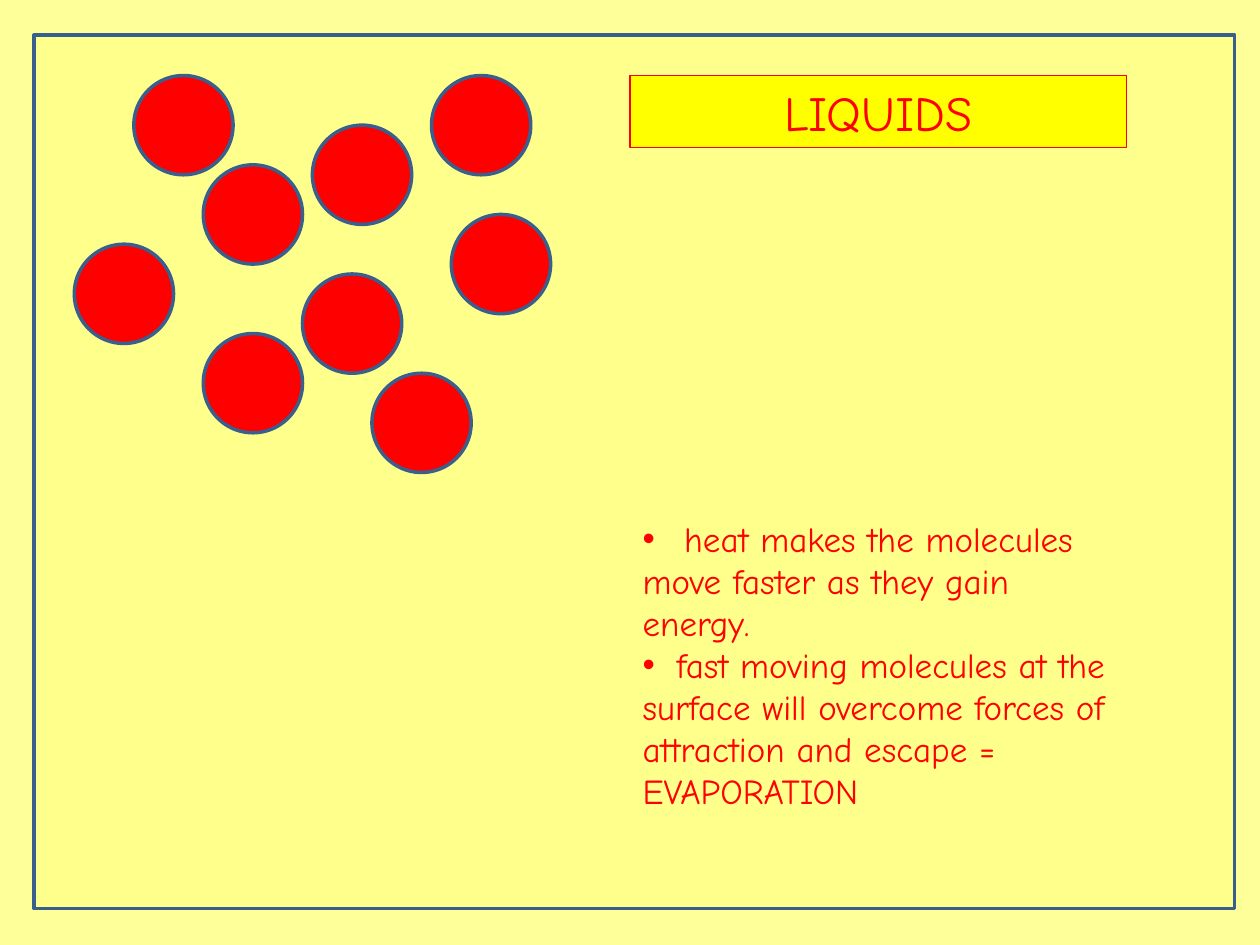
from pptx import Presentation
from pptx.dml.color import RGBColor
from pptx.enum.shapes import MSO_SHAPE
from pptx.enum.text import MSO_ANCHOR, MSO_AUTO_SIZE, PP_ALIGN
from pptx.oxml.ns import qn
from pptx.util import Inches, Pt
from lxml.etree import SubElement

COLORS = {"page": "FFFF99", "panel": "FFFF8B", "edge": "3A5F8C",
          "red": "FF0000", "label": "FFFF00"}
FONT = "Comic Neue"

# Molecules: left and top on a grid of 48 columns by 40 rows
COLS, ROWS, BALL = 48, 40, 10
BALLS = [(6, 0), (13, 9), (0, 17), (24, 5), (23, 20),
         (30, 30), (13, 26), (38, 14), (36, 0)]

# Each point with the tab stop that follows its bullet
POINTS = [
    ("heat makes the molecules move faster as they gain energy.", 0.33),
    ("fast moving molecules at the surface will overcome forces of "
     "attraction and escape = EVAPORATION", 0.27),
]


def color(name):
    return RGBColor.from_string(COLORS[name])


def paint(shape, fill, line, width):
    shape.fill.solid()
    shape.fill.fore_color.rgb = color(fill)
    shape.line.color.rgb = color(line)
    shape.line.width = Pt(width)


def draw(slide, kind, box, fill):
    shape = slide.shapes.add_shape(kind, *map(Inches, box))
    shape.shadow.inherit = False
    paint(shape, fill, "edge", 2)


def cluster(slide, box):
    left, top, width, height = box
    dx, dy = width / COLS, height / ROWS
    for col, row in BALLS:
        spot = (left + col * dx, top + row * dy, BALL * dx, BALL * dy)
        draw(slide, MSO_SHAPE.OVAL, spot, "red")


def place(holder, box, anchor):
    """Move a placeholder to its box, in front of the other parts."""
    holder.left, holder.top, holder.width, holder.height = map(Inches, box)
    holder.element.getparent().append(holder.element)
    frame = holder.text_frame
    frame.word_wrap = True
    frame.auto_size = MSO_AUTO_SIZE.NONE
    frame.vertical_anchor = anchor
    return frame


def style(para, size, align):
    para.alignment = align
    para.space_before = Pt(0)
    para.font.name = FONT
    para.font.size = Pt(size)
    para.font.color.rgb = color("red")


def heading(holder, box):
    frame = place(holder, box, MSO_ANCHOR.MIDDLE)
    frame.text = "LIQUIDS"
    style(frame.paragraphs[0], 28, PP_ALIGN.CENTER)
    paint(holder, "label", "red", 0.75)


def bullets(holder, box):
    frame = place(holder, box, MSO_ANCHOR.TOP)
    frame.text = "\n".join("\t" + text for text, _ in POINTS)
    for para, (_, stop) in zip(frame.paragraphs, POINTS):
        style(para, 20, PP_ALIGN.LEFT)
        # Wrapped lines start below the bullet
        props = para._p.get_or_add_pPr()
        props.set("marL", "0")
        props.set("indent", "0")
        SubElement(props, qn("a:buFont"), typeface="Arial")
        SubElement(props, qn("a:buChar"), char="•")
        tabs = SubElement(props, qn("a:tabLst"))
        SubElement(tabs, qn("a:tab"), pos=str(Inches(stop)), algn="l")


def main():
    deck = Presentation()
    deck.slide_width, deck.slide_height = Inches(10), Inches(7.5)
    slide = deck.slides.add_slide(deck.slide_layouts[1])
    slide.background.fill.solid()
    slide.background.fill.fore_color.rgb = color("page")

    # Framed panel and molecules
    draw(slide, MSO_SHAPE.RECTANGLE, (0.27, 0.28, 9.53, 6.93), "panel")
    cluster(slide, (0.59, 0.6, 3.78, 3.15))

    # Text column
    left, width = 5, 3.94
    heading(slide.shapes.title, (left, 0.6, width, 0.57))
    bullets(slide.placeholders[1], (left, 4.06, width, 2.46))
    deck.save("out.pptx")


if __name__ == "__main__":
    main()
